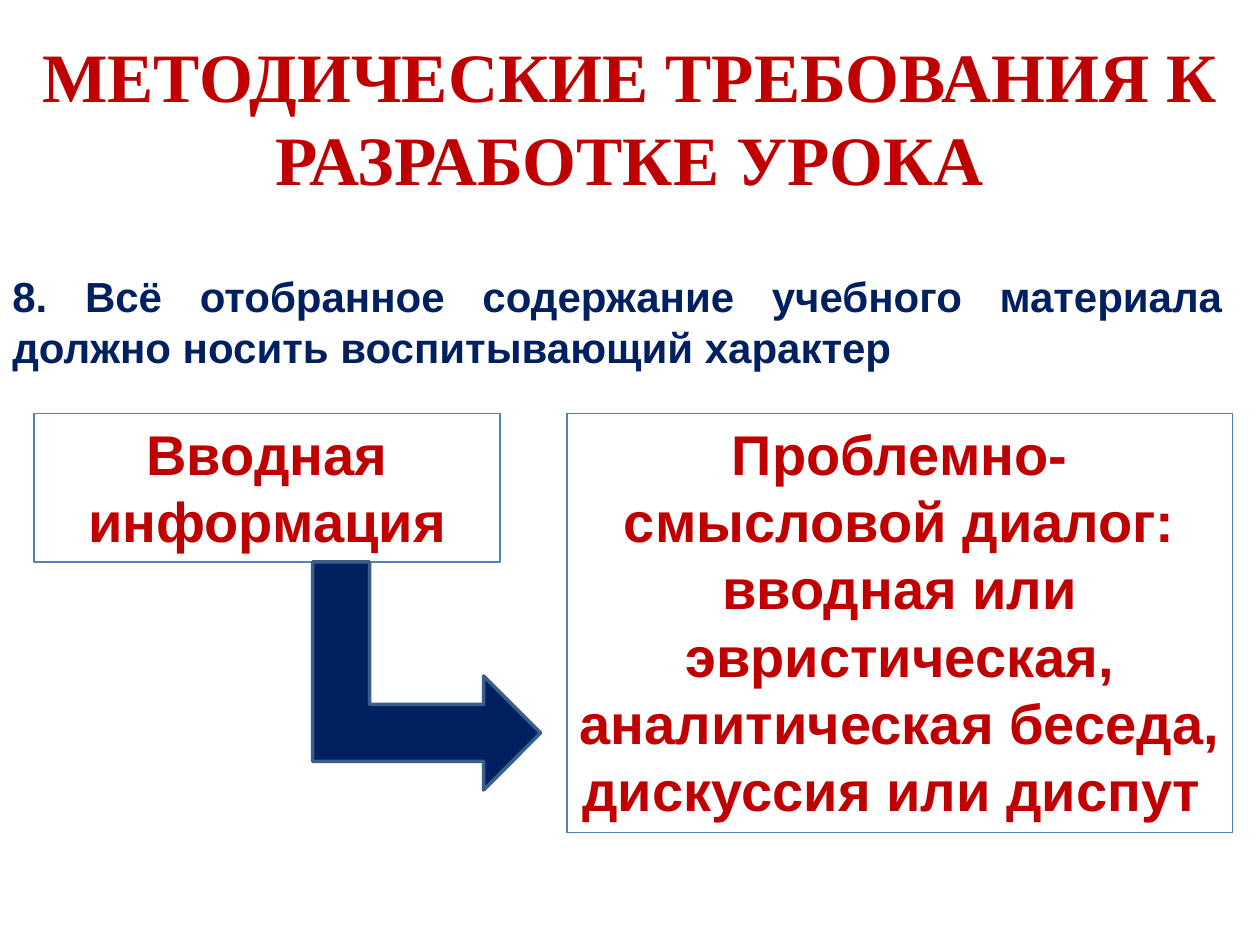
from dataclasses import dataclass

from pptx import Presentation
from pptx.dml.color import RGBColor
from pptx.enum.shapes import MSO_SHAPE
from pptx.enum.text import MSO_ANCHOR, MSO_AUTO_SIZE, PP_ALIGN
from pptx.util import Inches, Pt


@dataclass(frozen=True)
class Theme:
    red: RGBColor = RGBColor(0xC0, 0x00, 0x00)
    navy: RGBColor = RGBColor(0x00, 0x20, 0x60)
    frame: RGBColor = RGBColor(0x4F, 0x81, 0xBD)
    arrow_edge: RGBColor = RGBColor(0x3A, 0x5F, 0x8C)
    title_font: str = "Times New Roman"
    body_font: str = "Arial"
    title_size: float = 39.6
    statement_size: float = 24
    card_size: float = 32


@dataclass(frozen=True)
class Card:
    text: str
    left: float
    width: float
    height: float


THEME = Theme()
CARD_TOP = 3.28
CARDS = [
    Card("Вводная информация", 0.27, 3.7, 1.18),
    Card("Проблемно-смысловой диалог: вводная или эвристическая, "
         "аналитическая беседа, дискуссия или диспут ", 4.5, 5.28, 3.33),
]


def place(shape, left: float, top: float, width: float, height: float) -> None:
    shape.left, shape.top = Inches(left), Inches(top)
    shape.width, shape.height = Inches(width), Inches(height)


def write(shape, text: str, font: str, size: float, color: RGBColor,
          align: PP_ALIGN, anchor: MSO_ANCHOR = MSO_ANCHOR.TOP) -> None:
    frame = shape.text_frame
    frame.text = text
    frame.word_wrap = True
    frame.auto_size = MSO_AUTO_SIZE.NONE
    frame.vertical_anchor = anchor
    paragraph = frame.paragraphs[0]
    paragraph.alignment = align
    for run in paragraph.runs:
        run.font.name = font
        run.font.size = Pt(size)
        run.font.bold = True
        run.font.color.rgb = color


def add_card(slide, card: Card) -> None:
    box = slide.shapes.add_shape(
        MSO_SHAPE.RECTANGLE, Inches(card.left), Inches(CARD_TOP),
        Inches(card.width), Inches(card.height))
    box.shadow.inherit = False
    box.fill.background()
    box.line.color.rgb = THEME.frame
    box.line.width = Pt(0.75)
    write(box, card.text, THEME.body_font, THEME.card_size, THEME.red,
          PP_ALIGN.CENTER)


def add_bent_arrow(slide, left: float, top: float, side: float) -> None:
    arrow = slide.shapes.add_shape(
        MSO_SHAPE.BENT_UP_ARROW, Inches(left), Inches(top),
        Inches(side), Inches(side))
    arrow.rotation = 90
    arrow.shadow.inherit = False
    arrow.fill.solid()
    arrow.fill.fore_color.rgb = THEME.navy
    arrow.line.color.rgb = THEME.arrow_edge
    arrow.line.width = Pt(2)


def main() -> None:
    deck = Presentation()
    deck.slide_width, deck.slide_height = Inches(10), Inches(7.5)
    slide = deck.slides.add_slide(deck.slide_layouts.get_by_name("Title Only"))

    # Heading
    heading = slide.shapes.title
    place(heading, 0, 0.3, 10, 1.25)
    write(heading, "МЕТОДИЧЕСКИЕ ТРЕБОВАНИЯ К РАЗРАБОТКЕ УРОКА",
          THEME.title_font, THEME.title_size, THEME.red,
          PP_ALIGN.CENTER, MSO_ANCHOR.MIDDLE)

    # Requirement
    requirement = slide.shapes.add_textbox(
        Inches(0), Inches(2.1), Inches(9.8), Inches(0.91))
    write(requirement, "8. Всё отобранное содержание учебного материала "
          "должно носить воспитывающий характер",
          THEME.body_font, THEME.statement_size, THEME.navy, PP_ALIGN.JUSTIFY)

    # From introduction to dialogue
    for card in CARDS:
        add_card(slide, card)
    add_bent_arrow(slide, 2.48, CARD_TOP + CARDS[0].height, 1.81)

    deck.save("out.pptx")


if __name__ == "__main__":
    main()
